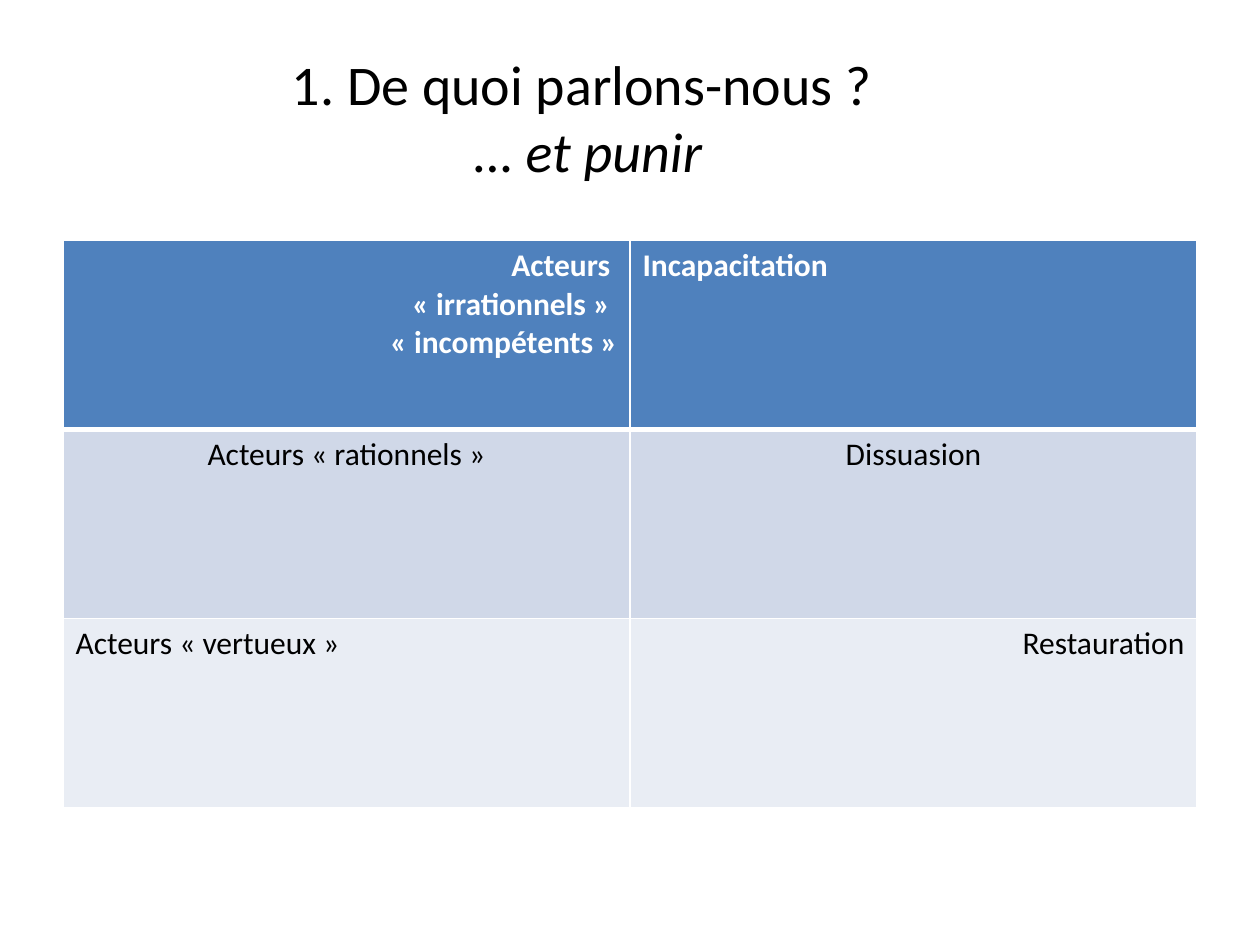
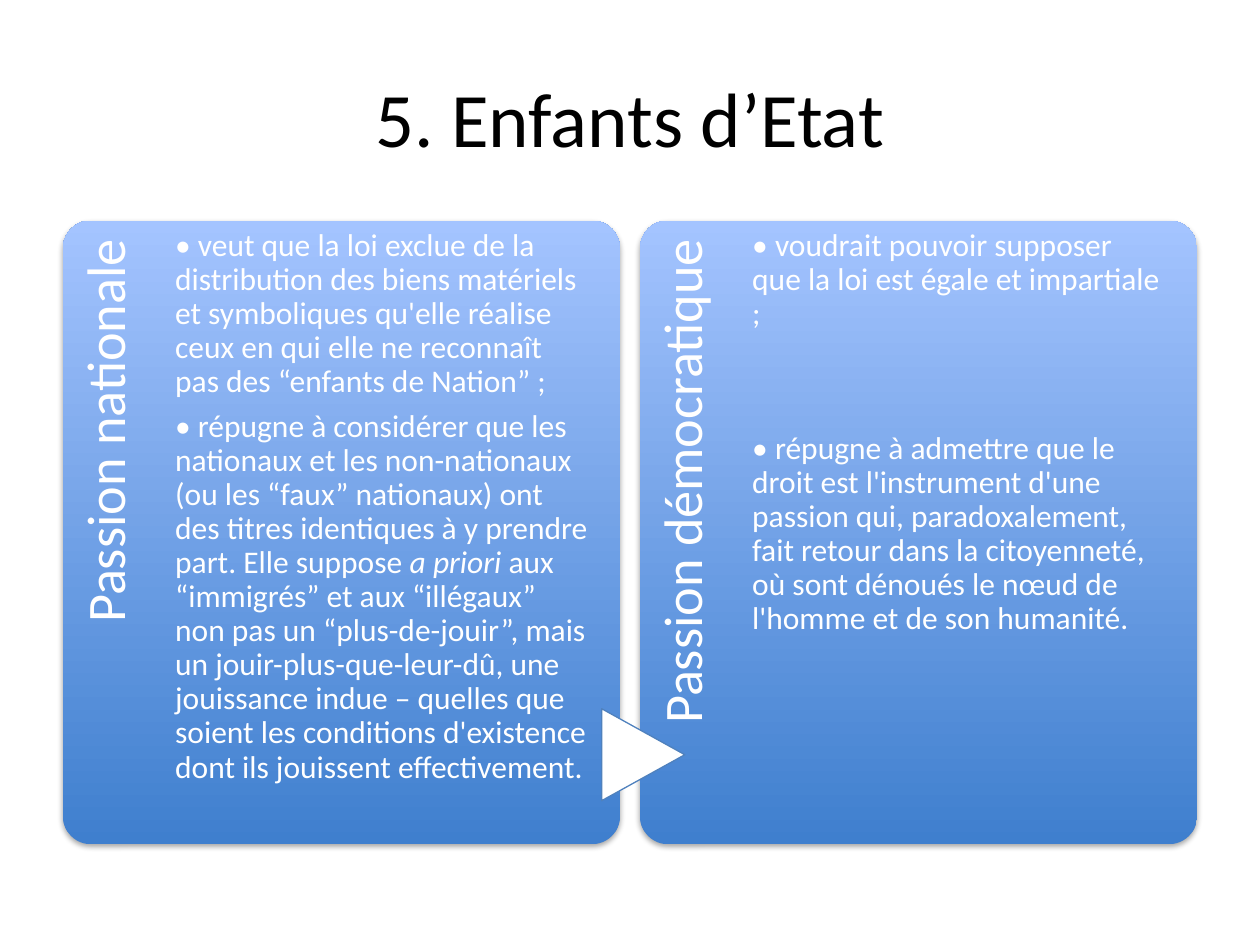
from lxml import etree
from pptx import Presentation
from pptx.dml.color import RGBColor
from pptx.enum.shapes import MSO_SHAPE as SHAPE
from pptx.enum.text import MSO_ANCHOR as ANCHOR, PP_ALIGN as ALIGN
from pptx.oxml.ns import qn
from pptx.util import Inches, Pt

BLACK = RGBColor(0x00, 0x00, 0x00)
WHITE = RGBColor(0xFF, 0xFF, 0xFF)
BLUE = RGBColor(0x4F, 0x81, 0xBD)
BAND_DARK = RGBColor(0xD0, 0xD8, 0xE8)
BAND_LIGHT = RGBColor(0xE9, 0xED, 0xF4)
PANEL_BOTTOM = RGBColor(0x3F, 0x7F, 0xCE)
PANEL_TOP = RGBColor(0xA4, 0xC4, 0xFF)

LEFT, RIGHT, CENTER = ALIGN.LEFT, ALIGN.RIGHT, ALIGN.CENTER

ACTOR_ROWS = [
    (BLUE, WHITE, True, [
        (RIGHT, ["Acteurs ", "« irrationnels » ", "« incompétents »"]),
        (LEFT, ["Incapacitation"])]),
    (BAND_DARK, BLACK, False, [
        (CENTER, ["Acteurs « rationnels »"]),
        (CENTER, ["Dissuasion"])]),
    (BAND_LIGHT, BLACK, False, [
        (LEFT, ["Acteurs « vertueux »"]),
        (RIGHT, ["Restauration"])]),
]

PASSIONS = [
    ("Passion nationale", 6.3, [
        [("• veut que la loi exclue de la distribution des biens matériels et "
          "symboliques qu'elle réalise ceux en qui elle ne reconnaît pas des "
          "“enfants de Nation” ;", False)],
        [("• répugne à considérer que les nationaux et les non-nationaux (ou les "
          "“faux” nationaux) ont des titres identiques à y prendre part. "
          "Elle suppose ", False),
         ("a priori", True),
         (" aux “immigrés” et aux “illégaux” non pas un “plus-de-jouir”, "
          "mais un jouir-plus-que-leur-dû, une jouissance indue – quelles que "
          "soient les conditions d'existence dont ils jouissent effectivement.",
          False)]]),
    ("Passion démocratique ", 57.7, [
        [("• voudrait pouvoir supposer que la loi est égale et impartiale ;",
          False)],
        [("• répugne à admettre que le droit est l'instrument d'une passion qui, "
          "paradoxalement, fait retour dans la citoyenneté, où sont dénoués le "
          "nœud de l'homme et de son humanité.", False)]]),
]


class Deck:
    font = "Calibri"

    def __init__(self):
        self.prs = Presentation()
        self.prs.slide_width, self.prs.slide_height = Inches(10), Inches(7.5)
        self.s = None

    def slide(self):
        self.s = self.prs.slides.add_slide(self.prs.slide_layouts[6])

    def run(self, p, text, size, color, bold=False, italic=False):
        r = p.add_run()
        r.text = text
        f = r.font
        f.name, f.size, f.bold, f.italic = self.font, Pt(size), bold, italic
        f.color.rgb = color

    def text(self, x, y, w, h, insets):
        sp = self.s.shapes.add_textbox(Inches(x), Inches(y), Inches(w), Inches(h))
        tf = sp.text_frame
        tf.word_wrap = True
        (tf.margin_left, tf.margin_top,
         tf.margin_right, tf.margin_bottom) = map(Inches, insets)
        return sp

    def title(self, x, size, lines):
        tf = self.text(x, 0.3, 9, 1.25, (0.1, 0.05, 0.1, 0.05)).text_frame
        tf.vertical_anchor = ANCHOR.MIDDLE
        p = tf.paragraphs[0]
        p.alignment = CENTER
        for i, (text, italic) in enumerate(lines):
            if i:
                p.add_line_break()
            self.run(p, text, size, BLACK, italic=italic)

    def paragraphs(self, tf, items, size, color, align=LEFT, bold=False,
                   line=None, after=None):
        for i, runs in enumerate(items):
            p = tf.add_paragraph() if i else tf.paragraphs[0]
            p.alignment = align
            if line:
                p.line_spacing, p.space_after = line, Pt(after)
            for text, italic in runs:
                self.run(p, text, size, color, bold, italic)

    def borders(self, cell, bottom):
        tc_pr = cell._tc.get_or_add_tcPr()
        for i, (side, width) in enumerate(zip("LRTB", (1, 1, 1, bottom))):
            ln = etree.Element(qn(f"a:ln{side}"), w=str(Pt(width)))
            fill = etree.SubElement(ln, qn("a:solidFill"))
            etree.SubElement(fill, qn("a:srgbClr"), val=str(WHITE))
            tc_pr.insert(i, ln)

    def table(self, x, y, w, h, rows):
        tbl = self.s.shapes.add_table(len(rows), 2, Inches(x), Inches(y),
                                      Inches(w), Inches(h)).table
        for i, (fill, color, bold, cells) in enumerate(rows):
            for j, (align, lines) in enumerate(cells):
                cell = tbl.cell(i, j)
                cell.fill.solid()
                cell.fill.fore_color.rgb = fill
                self.borders(cell, 1 if i else 3)
                self.paragraphs(cell.text_frame, [[(t, False)] for t in lines],
                                18, color, align, bold)

    def shape(self, kind, x, y, w, h):
        sp = self.s.shapes.add_shape(kind, Inches(x), Inches(y),
                                     Inches(w), Inches(h))
        sp.shadow.inherit = False
        return sp

    def panel(self, x, y, w, h):
        sp = self.shape(SHAPE.ROUNDED_RECTANGLE, x, y, w, h)
        sp.adjustments[0] = 0.05
        sp.line.fill.background()
        sp.fill.gradient()
        sp.fill.gradient_angle = 90
        for stop, color in zip(sp.fill.gradient_stops, (PANEL_BOTTOM, PANEL_TOP)):
            stop.color.rgb = color
        effects = sp._element.spPr.find(qn("a:effectLst"))
        shadow = etree.SubElement(effects, qn("a:outerShdw"), blurRad=str(Pt(3.1)),
                                  dist=str(Pt(1.8)), dir="5400000", rotWithShape="0")
        color = etree.SubElement(shadow, qn("a:srgbClr"), val=str(BLACK))
        etree.SubElement(color, qn("a:alpha"), val="35000")

    def passion(self, x, y, label, after, items):
        self.panel(x, y, 4.42, 4.95)
        sp = self.text(x - 1.59, y + 1.59, 4.06, 0.88, (0, 0.12, 0.15, 0))
        sp.rotation = 270
        self.paragraphs(sp.text_frame, [[(label, False)]], 31, WHITE, RIGHT,
                        line=0.9, after=0)
        sp = self.text(x + 0.89, y, 3.29, 4.95, (0, 0.07, 0, 0))
        self.paragraphs(sp.text_frame, items, 18, WHITE, line=0.9, after=after)

    def arrow(self, x, y, w, h):
        sp = self.shape(SHAPE.FLOWCHART_EXTRACT, x, y, w, h)
        sp.rotation = 90
        sp.fill.solid()
        sp.fill.fore_color.rgb = WHITE
        sp.line.color.rgb, sp.line.width = BLUE, Pt(0.75)


def main():
    deck = Deck()

    deck.slide()
    deck.title(0.17, 32, [("1. De quoi parlons-nous ? ", False),
                          ("… et punir", True)])
    deck.table(0.5, 1.91, 9, 4.5, ACTOR_ROWS)

    deck.slide()
    deck.title(0.5, 44, [("5. Enfants d’Etat", False)])
    for i, (label, after, items) in enumerate(PASSIONS):
        deck.passion(0.5 + 4.58 * i, 1.75, label, after, items)
    deck.arrow(4.74, 5.66, 0.73, 0.66)

    deck.prs.save("out.pptx")


if __name__ == "__main__":
    main()
